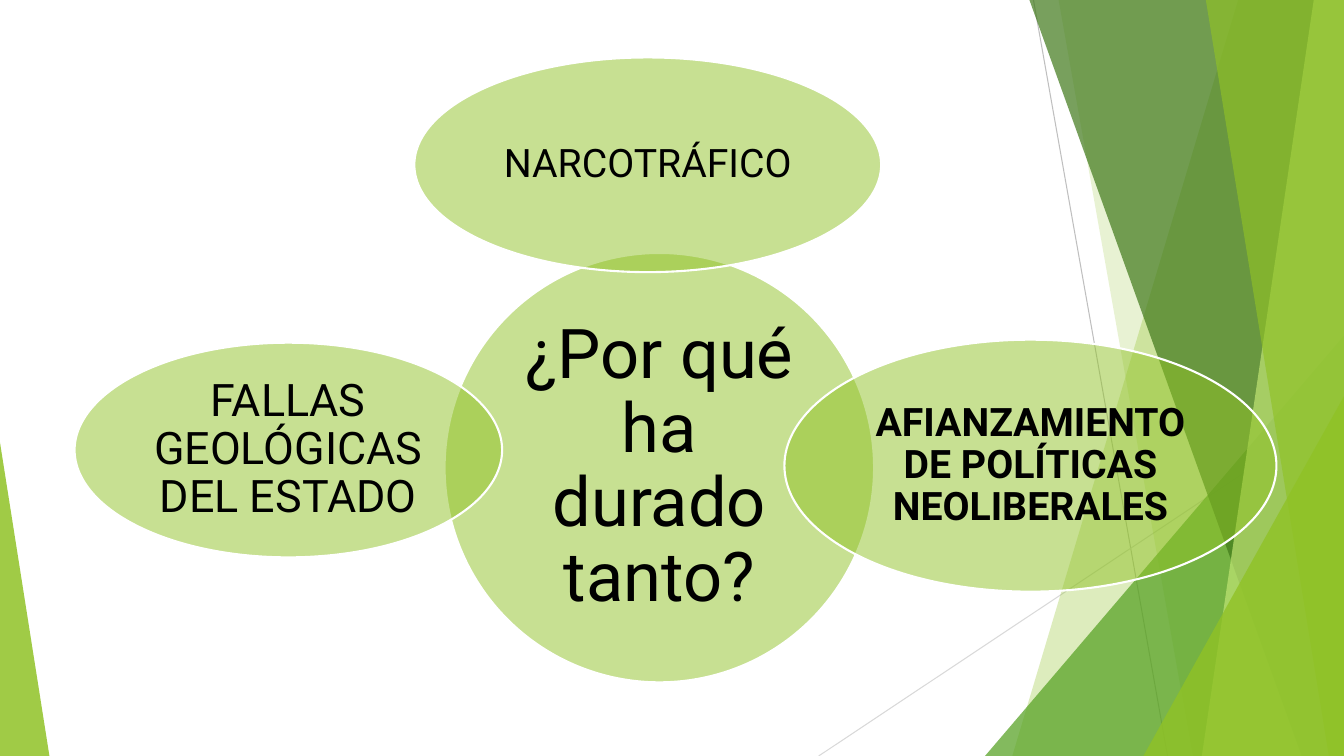
from lxml.etree import SubElement
from pptx import Presentation
from pptx.dml.color import RGBColor
from pptx.enum.shapes import MSO_CONNECTOR, MSO_SHAPE
from pptx.enum.text import MSO_ANCHOR, PP_ALIGN
from pptx.oxml.ns import qn
from pptx.util import Inches, Pt

WIDE, HIGH = 13.33, 7.5
LIME, WHITE, BLACK = "90C226", "FFFFFF", "000000"

# start, end, colour
RAYS = [
    ((10.25, 0), (11.58, HIGH), "BFBFBF"),
    ((WIDE, 4.03), (8.12, HIGH), "D9D9D9"),
]
# Bands reach the right edge: top x, bottom x, colour, opacity
# Wedges stand on the bottom edge: left, top, width, apex, colour, opacity
DECOR = [
    ("band", 12.28, 10.04, LIME, 30),
    ("band", 10.5, 11.83, LIME, 20),
    ("wedge", 9.77, 3.33, 3.56, 1, "54A021", 72),
    ("band", 10.21, 12.91, "3F7819", 70),
    ("band", 13.03, 11.92, "C0E474", 70),
    ("band", 11.96, 13.18, LIME, 65),
    ("wedge", 11.34, 3.93, 1.99, 1, LIME, 80),
    ("wedge", 0, 4.39, 0.49, 0, LIME, 85),
]
# text, left, top, width, height, size, bold, inset
OVALS = [
    ("¿Por qué ha durado tanto?", 4.41, 2.51, 4.26, 4.26, 49, False, 0.07),
    ("NARCOTRÁFICO", 4.11, 0.57, 4.63, 2.13, 28, False, 0.04),
    ("AFIANZAMIENTO DE POLÍTICAS NEOLIBERALES",
     7.78, 3.37, 4.88, 2.5, 28, True, 0.04),
    ("FALLAS GEOLÓGICAS DEL ESTADO",
     0.74, 3.4, 4.24, 2.13, 32, False, 0.04),
]


def rgb(code):
    return RGBColor.from_string(code)


def paint(shape, code, alpha):
    """Fill with a see-through colour, with no outline and no shadow."""
    shape.shadow.inherit = False
    shape.fill.solid()
    shape.fill.fore_color.rgb = rgb(code)
    tint = shape.fill._xPr.find(".//" + qn("a:srgbClr"))
    SubElement(tint, qn("a:alpha"), val=str(alpha * 1000))
    shape.line.fill.background()


def add_ray(shapes, start, end, code):
    ends = [Inches(n) for n in start + end]
    ray = shapes.add_connector(MSO_CONNECTOR.STRAIGHT, *ends)
    ray.line.color.rgb = rgb(code)
    ray.line.width = Pt(0.75)
    SubElement(ray._element.spPr, qn("a:effectLst"))


def add_band(shapes, top, base, code, alpha):
    path = shapes.build_freeform(Inches(top), 0)
    rest = [(WIDE, 0), (WIDE, HIGH), (base, HIGH)]
    path.add_line_segments([(Inches(x), Inches(y)) for x, y in rest])
    paint(path.convert_to_shape(), code, alpha)


def add_wedge(shapes, left, top, width, apex, code, alpha):
    box = [Inches(n) for n in (left, top, width, HIGH - top)]
    wedge = shapes.add_shape(MSO_SHAPE.ISOSCELES_TRIANGLE, *box)
    wedge.adjustments[0] = apex
    paint(wedge, code, alpha)


def add_oval(shapes, text, left, top, width, height, size, bold, inset):
    box = [Inches(n) for n in (left, top, width, height)]
    oval = shapes.add_shape(MSO_SHAPE.OVAL, *box)
    paint(oval, LIME, 50)
    oval.line.color.rgb = rgb(WHITE)
    oval.line.width = Pt(1.5)
    frame = oval.text_frame
    frame.word_wrap = True
    frame.vertical_anchor = MSO_ANCHOR.MIDDLE
    frame.margin_left = frame.margin_right = Inches(inset)
    frame.margin_top = frame.margin_bottom = Inches(inset)
    para = frame.paragraphs[0]
    para.alignment = PP_ALIGN.CENTER
    para.line_spacing = 0.9
    run = para.add_run()
    run.text = text
    run.font.name = "Roboto"
    run.font.size = Pt(size)
    run.font.bold = bold
    run.font.color.rgb = rgb(BLACK)


def main():
    deck = Presentation()
    deck.slide_width, deck.slide_height = Inches(WIDE), Inches(HIGH)
    blank = deck.slide_layouts.get_by_name("Blank")
    shapes = deck.slides.add_slide(blank).shapes
    for ray in RAYS:
        add_ray(shapes, *ray)
    for kind, *part in DECOR:
        draw = add_band if kind == "band" else add_wedge
        draw(shapes, *part)
    for oval in OVALS:
        add_oval(shapes, *oval)
    deck.save("out.pptx")


if __name__ == "__main__":
    main()
